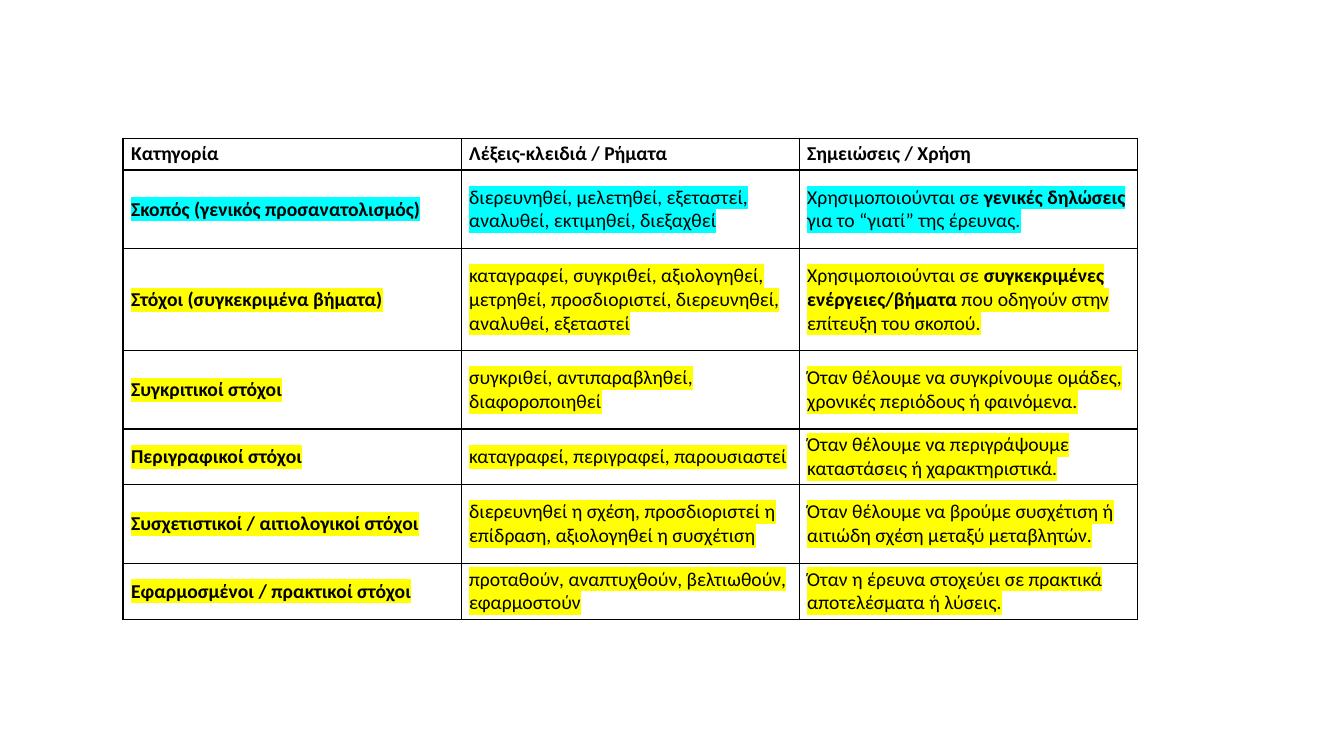
from lxml.etree import SubElement
from pptx import Presentation
from pptx.dml.color import RGBColor
from pptx.enum.text import MSO_ANCHOR
from pptx.oxml.ns import qn
from pptx.util import Inches, Pt

BLACK = RGBColor(0x00, 0x00, 0x00)
CYAN = RGBColor(0x00, 0xFF, 0xFF)
YELLOW = RGBColor(0xFF, 0xFF, 0x00)

HEADINGS = ["Κατηγορία", "Λέξεις-κλειδιά / Ρήματα", "Σημειώσεις / Χρήση"]

# Category, verbs, runs of the note (every second run is bold)
GOALS = [
    ("Σκοπός (γενικός προσανατολισμός)",
     "διερευνηθεί, μελετηθεί, εξεταστεί, αναλυθεί, εκτιμηθεί, διεξαχθεί",
     ["Χρησιμοποιούνται σε ", "γενικές δηλώσεις", " για το “γιατί” της έρευνας."]),
    ("Στόχοι (συγκεκριμένα βήματα)",
     "καταγραφεί, συγκριθεί, αξιολογηθεί, μετρηθεί, προσδιοριστεί, "
     "διερευνηθεί, αναλυθεί, εξεταστεί",
     ["Χρησιμοποιούνται σε ", "συγκεκριμένες ενέργειες/βήματα",
      " που οδηγούν στην επίτευξη του σκοπού."]),
    ("Συγκριτικοί στόχοι",
     "συγκριθεί, αντιπαραβληθεί, διαφοροποιηθεί",
     ["Όταν θέλουμε να συγκρίνουμε ομάδες, χρονικές περιόδους ή φαινόμενα."]),
    ("Περιγραφικοί στόχοι",
     "καταγραφεί, περιγραφεί, παρουσιαστεί",
     ["Όταν θέλουμε να περιγράψουμε καταστάσεις ή χαρακτηριστικά."]),
    ("Συσχετιστικοί / αιτιολογικοί στόχοι",
     "διερευνηθεί η σχέση, προσδιοριστεί η επίδραση, αξιολογηθεί η συσχέτιση",
     ["Όταν θέλουμε να βρούμε συσχέτιση ή αιτιώδη σχέση μεταξύ μεταβλητών."]),
    ("Εφαρμοσμένοι / πρακτικοί στόχοι",
     "προταθούν, αναπτυχθούν, βελτιωθούν, εφαρμοστούν",
     ["Όταν η έρευνα στοχεύει σε πρακτικά αποτελέσματα ή λύσεις."]),
]
ROW_HEIGHTS = [0.31, 0.78, 1.01, 0.78, 0.55, 0.78, 0.55]


def add_run(paragraph, text, bold, highlight):
    run = paragraph.add_run()
    run.text = text
    font = run.font
    font.size = Pt(14)
    font.bold = bold
    font.color.rgb = BLACK
    if highlight is not None:
        # The highlight must follow the fill and precede the typeface
        mark = SubElement(font.fill._xPr, qn("a:highlight"))
        SubElement(mark, qn("a:srgbClr"), val=str(highlight))
    font.name = "Calibri"


def draw_borders(cell):
    properties = cell._tc.get_or_add_tcPr()
    for side in ("L", "R", "T", "B"):
        line = SubElement(properties, qn(f"a:ln{side}"), w=str(Pt(1)))
        fill = SubElement(line, qn("a:solidFill"))
        SubElement(fill, qn("a:srgbClr"), val=str(BLACK))


def fill_cell(cell, runs, highlight):
    """Format a cell and write its (text, bold) runs."""
    cell.vertical_anchor = MSO_ANCHOR.MIDDLE
    cell.margin_left = cell.margin_right = Inches(0.08)
    cell.margin_top = cell.margin_bottom = Inches(0.04)
    draw_borders(cell)
    cell.fill.background()
    for text, bold in runs:
        add_run(cell.text_frame.paragraphs[0], text, bold, highlight)


def add_goals_table(slide, left, top, width):
    rows = [[[(heading, True)] for heading in HEADINGS]]
    for category, verbs, note in GOALS:
        note_runs = [(text, index % 2 == 1) for index, text in enumerate(note)]
        rows.append([[(category, True)], [(verbs, False)], note_runs])
    highlights = [None, CYAN] + [YELLOW] * (len(GOALS) - 1)

    table = slide.shapes.add_table(
        len(rows), len(HEADINGS), Inches(left), Inches(top),
        Inches(width), Inches(sum(ROW_HEIGHTS))).table
    table.first_row = False
    table.horz_banding = False
    for row, height in zip(table.rows, ROW_HEIGHTS):
        row.height = Inches(height)
    for row, contents, highlight in zip(table.rows, rows, highlights):
        for cell, runs in zip(row.cells, contents):
            fill_cell(cell, runs, highlight)


def main():
    presentation = Presentation()
    presentation.slide_width = Inches(13.33)
    presentation.slide_height = Inches(7.5)
    slide = presentation.slides.add_slide(presentation.slide_layouts[6])
    add_goals_table(slide, 1.22, 1.37, 10.06)
    presentation.save("out.pptx")


if __name__ == "__main__":
    main()
